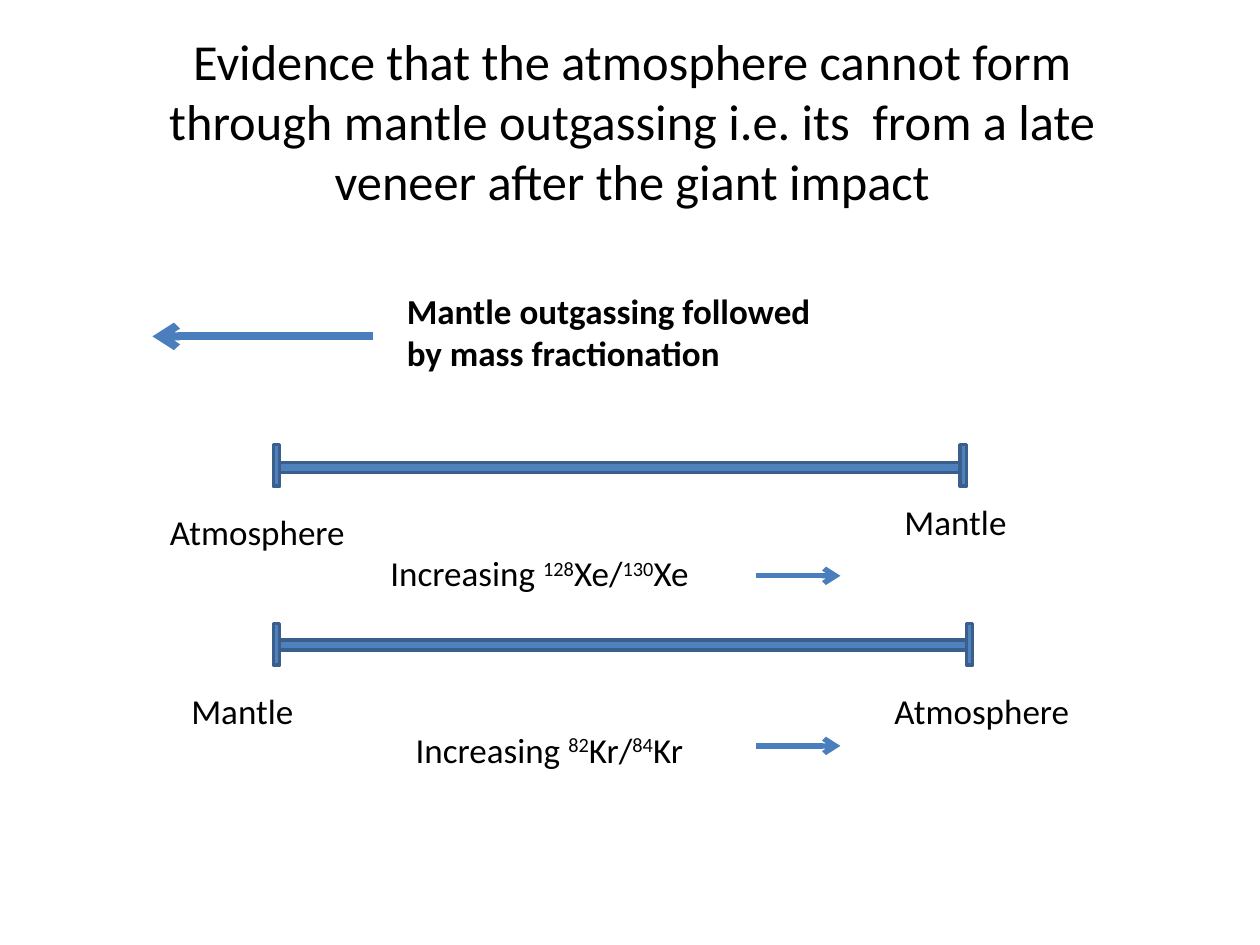
from dataclasses import dataclass

from lxml import etree
from pptx import Presentation
from pptx.dml.color import RGBColor
from pptx.enum import shapes, text
from pptx.oxml import ns
from pptx.util import Inches, Pt


@dataclass(frozen=True)
class Theme:
    font: str = "Calibri"
    ink: RGBColor = RGBColor(0x00, 0x00, 0x00)
    bar: RGBColor = RGBColor(0x4F, 0x81, 0xBD)
    edge: RGBColor = RGBColor(0x3A, 0x5F, 0x8C)
    arrow: RGBColor = RGBColor(0x4B, 0x7E, 0xBC)
    title: float = 28.8
    body: float = 20


THEME = Theme()


def add_run(p, content, size, bold=False, raised=False):
    r = p.add_run()
    r.text = content
    r.font.name = THEME.font
    r.font.size = Pt(size)
    r.font.bold = bold
    r.font.color.rgb = THEME.ink
    if raised:
        r._r.get_or_add_rPr().set("baseline", "30000")


def add_box(s, x, y, w, h, wrap=False):
    sp = s.shapes.add_textbox(Inches(x), Inches(y), Inches(w), Inches(h))
    tf = sp.text_frame
    tf.word_wrap = wrap
    tf.auto_size = text.MSO_AUTO_SIZE.SHAPE_TO_FIT_TEXT
    return tf


def add_title(s, content):
    tf = add_box(s, 0.92, 0.33, 8.2, 1.25, wrap=True)
    tf.auto_size = text.MSO_AUTO_SIZE.NONE
    tf.vertical_anchor = text.MSO_ANCHOR.MIDDLE
    p = tf.paragraphs[0]
    p.alignment = text.PP_ALIGN.CENTER
    add_run(p, content, THEME.title)


def add_label(s, x, y, w, lines, bold=False):
    tf = add_box(s, x, y, w, 0.11 + 0.33 * len(lines))
    for i, line in enumerate(lines):
        p = tf.add_paragraph() if i else tf.paragraphs[0]
        add_run(p, line, THEME.body, bold)


def add_ratio(s, x, y, element, upper, lower):
    p = add_box(s, x, y, 3.08, 0.44, wrap=True).paragraphs[0]
    parts = ("Increasing ", upper, f"{element}/", lower, element)
    for i, part in enumerate(parts):
        add_run(p, part, THEME.body, raised=i % 2 == 1)


def add_rect(s, x, y, w, h):
    sp = s.shapes.add_shape(
        shapes.MSO_SHAPE.RECTANGLE, Inches(x), Inches(y), Inches(w), Inches(h)
    )
    sp.shadow.inherit = False
    sp.fill.solid()
    sp.fill.fore_color.rgb = THEME.bar
    sp.line.color.rgb = THEME.edge
    sp.line.width = Pt(2)


def add_scale(s, bar_y, cap_y, right_cap_x):
    add_rect(s, 2.17, bar_y, 5.5, 0.08)
    for x in (2.17, right_cap_x):
        add_rect(s, x, cap_y, 0.05, 0.33)


def add_arrow(s, x1, x2, y, width):
    c = s.shapes.add_connector(
        shapes.MSO_CONNECTOR.STRAIGHT, Inches(x1), Inches(y), Inches(x2), Inches(y)
    )
    c.line.color.rgb = THEME.arrow
    c.line.width = Pt(width)
    etree.SubElement(c.line._get_or_add_ln(), ns.qn("a:tailEnd"), type="arrow")
    etree.SubElement(c._element.spPr, ns.qn("a:effectLst"))


def main():
    prs = Presentation()
    prs.slide_width, prs.slide_height = Inches(10), Inches(7.5)
    s = prs.slides.add_slide(prs.slide_layouts[6])

    add_title(
        s,
        "Evidence that the atmosphere cannot form through mantle outgassing "
        "i.e. its  from a late veneer after the giant impact",
    )
    add_arrow(s, 2.96, 1.21, 2.67, 4.5)
    add_label(
        s, 3.13, 2.25, 3.95,
        ["Mantle outgassing followed", "by mass fractionation"], bold=True,
    )

    add_scale(s, 3.67, 3.53, 7.62)
    add_label(s, 1.25, 4, 1.71, ["Atmosphere"])
    add_label(s, 7.08, 3.92, 1.04, ["Mantle"])
    add_ratio(s, 3, 4.33, "Xe", "128", "130")
    add_arrow(s, 6, 6.67, 4.57, 3)

    add_scale(s, 5.08, 4.95, 7.67)
    add_label(s, 1.42, 5.42, 1.04, ["Mantle"])
    add_label(s, 7, 5.42, 1.71, ["Atmosphere"])
    add_ratio(s, 3.2, 5.73, "Kr", "82", "84")
    add_arrow(s, 6, 6.67, 5.92, 3)

    prs.save("out.pptx")


if __name__ == "__main__":
    main()
